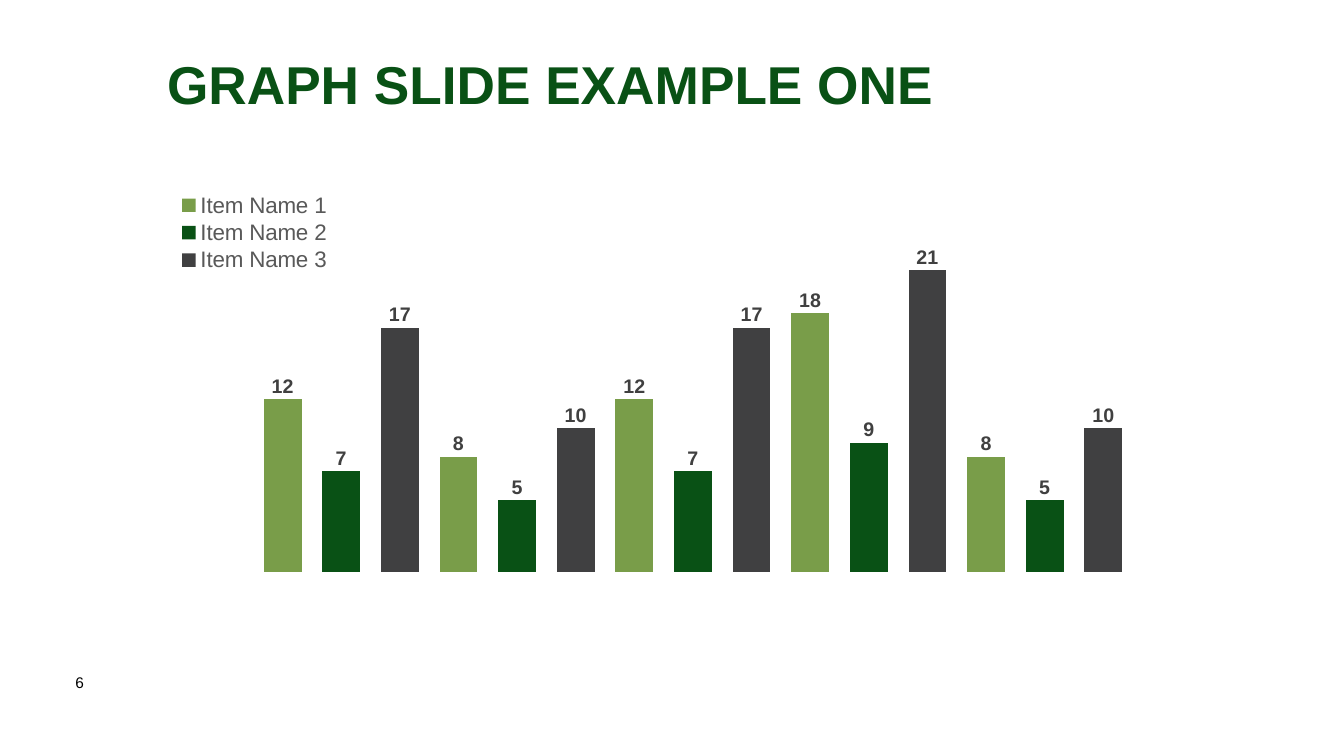
from dataclasses import dataclass

from lxml.etree import SubElement
from pptx import Presentation
from pptx.chart.chart import Chart
from pptx.chart.data import CategoryChartData
from pptx.chart.series import BarSeries
from pptx.dml.color import RGBColor
from pptx.enum.chart import XL_CHART_TYPE as ChartType
from pptx.enum.chart import XL_LABEL_POSITION as LabelPosition
from pptx.enum.chart import XL_LEGEND_POSITION as LegendPosition
from pptx.oxml.ns import qn
from pptx.slide import Slide
from pptx.text.text import Font
from pptx.util import Cm, Pt

FONT = "Arial"
GROUPS = 5
LABEL_RISE = -0.065


@dataclass(frozen=True)
class Caption:
    text: str
    left: float
    top: float
    width: float
    height: float
    size: int
    color: str
    bold: bool = False


@dataclass(frozen=True)
class Item:
    name: str
    slot: int
    values: tuple[int, ...]
    color: str


CAPTIONS = (
    Caption("6", 1.65, 16.84, 1.47, 1.37, 11, "000000"),
    Caption("GRAPH SLIDE EXAMPLE ONE", 3.96, 1.17, 26.72, 2.49, 38, "095115", True),
)
ITEMS = (
    Item("Item Name 3", 2, (17, 10, 17, 21, 10), "404041"),
    Item("Item Name 2", 1, (7, 5, 7, 9, 5), "095115"),
    Item("Item Name 1", 0, (12, 8, 12, 18, 8), "799D49"),
)


def rgb(color: str) -> RGBColor:
    return RGBColor.from_string(color)


def style_font(font: Font, size: int, color: str, bold: bool = False) -> None:
    font.name = FONT
    font.size = Pt(size)
    font.bold = bold
    font.color.rgb = rgb(color)


def add_caption(slide: Slide, caption: Caption) -> None:
    box = slide.shapes.add_textbox(
        Cm(caption.left), Cm(caption.top), Cm(caption.width), Cm(caption.height)
    )
    box.text_frame.word_wrap = True
    paragraph = box.text_frame.paragraphs[0]
    paragraph.text = caption.text
    style_font(paragraph.font, caption.size, caption.color, caption.bold)


def add_manual_layout(parent, **settings: str | float):
    layout = parent.find(qn("c:layout"))
    if layout is None:
        layout = SubElement(parent, qn("c:layout"))
    manual = SubElement(layout, qn("c:manualLayout"))
    for tag, value in settings.items():
        SubElement(manual, qn(f"c:{tag}")).set("val", str(value))
    return layout


def style_series(series: BarSeries, item: Item) -> None:
    series.format.fill.solid()
    series.format.fill.fore_color.rgb = rgb(item.color)
    labels = series.data_labels
    labels.show_value = True
    labels.position = LabelPosition.INSIDE_END
    style_font(labels.font, 14, "404040", True)
    for group in range(GROUPS):
        label = series.points[3 * group + item.slot].data_label
        label.position = LabelPosition.INSIDE_END
        style_font(label.font, 14, "404040", True)
    for element in series._element.iter(qn("c:dLbl")):
        element.insert(1, add_manual_layout(element, x=0, y=LABEL_RISE))


def place_legend(chart: Chart) -> None:
    chart.has_legend = True
    legend = chart.legend
    legend.position = LegendPosition.RIGHT
    legend.include_in_layout = False
    style_font(legend.font, 16, "595959")
    element = legend._element
    layout = add_manual_layout(
        element, xMode="edge", yMode="edge", x=0.02, y=0.06, w=0.15, h=0.2
    )
    element.find(qn("c:legendPos")).addnext(layout)


def add_item_chart(slide: Slide) -> None:
    data = CategoryChartData()
    data.categories = [str(number + 1) for number in range(3 * GROUPS)]
    for item in ITEMS:
        values: list[int | None] = [None] * (3 * GROUPS)
        values[item.slot::3] = item.values
        data.add_series(item.name, values)

    chart = slide.shapes.add_chart(
        ChartType.COLUMN_STACKED, Cm(3.94), Cm(4.14), Cm(26.01), Cm(10.77), data
    ).chart
    chart.has_title = False
    style_font(chart.font, 10, "000000")
    chart.category_axis.visible = False
    chart.value_axis.visible = False
    chart.value_axis.has_major_gridlines = False
    chart.value_axis.minimum_scale = 0
    chart.value_axis.maximum_scale = 25

    plot = chart.plots[0]
    plot.gap_width = 55
    plot.overlap = 100
    plot.vary_by_categories = False
    for series, item in zip(plot.series, ITEMS):
        style_series(series, item)
    place_legend(chart)

    plot_area = chart._chartSpace.chart.plotArea
    layout = add_manual_layout(
        plot_area, layoutTarget="inner", xMode="edge", yMode="edge",
        x=0.094, y=0.113, w=0.852, h=0.841,
    )
    plot_area.insert(0, layout)


def main() -> None:
    presentation = Presentation()
    presentation.slide_width = Cm(33.87)
    presentation.slide_height = Cm(19.05)
    slide = presentation.slides.add_slide(presentation.slide_layouts[6])
    add_item_chart(slide)
    for caption in CAPTIONS:
        add_caption(slide, caption)
    presentation.save("out.pptx")


if __name__ == "__main__":
    main()
